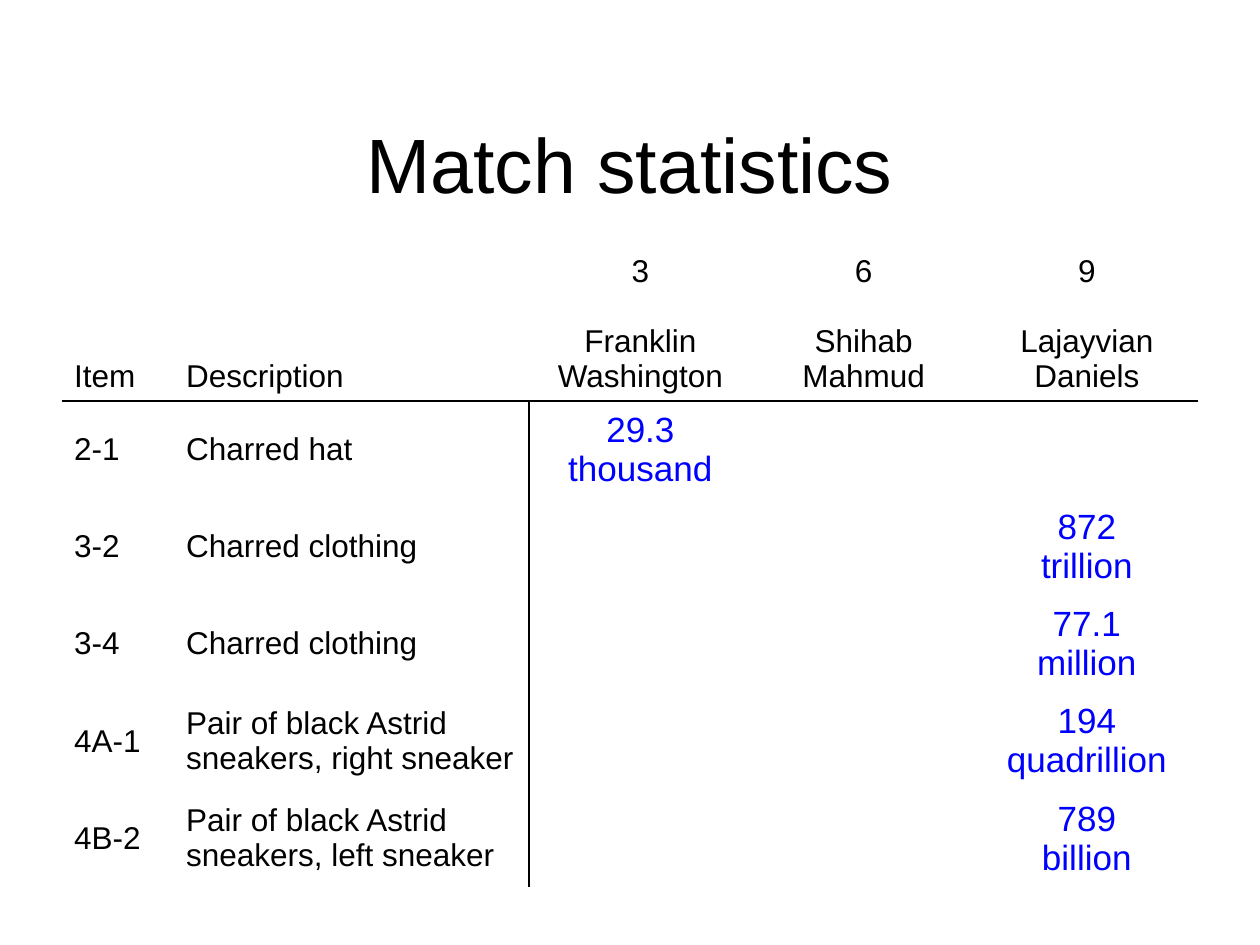
from dataclasses import dataclass

from lxml.etree import SubElement
from pptx import Presentation
from pptx.dml.color import RGBColor
from pptx.enum.text import MSO_ANCHOR, PP_ALIGN
from pptx.oxml.ns import qn
from pptx.slide import Slide
from pptx.table import Table, _Cell
from pptx.text.text import _Paragraph
from pptx.util import Cm, Pt

BLACK = RGBColor(0x00, 0x00, 0x00)
BLUE = RGBColor(0x00, 0x00, 0xFF)
FONT = "Arial"
COLUMN_WIDTHS = (2.26, 7.16, 4.5, 4.5, 4.5)
HEADER_HEIGHT = 3.3
ROW_HEIGHT = 1.96
BORDER_WIDTH = Pt(1.5)


@dataclass(frozen=True)
class Person:
    number: str
    name: str


@dataclass(frozen=True)
class Evidence:
    item: str
    description: str
    person: int
    statistic: str


PEOPLE = (
    Person("3", "Franklin Washington"),
    Person("6", "Shihab Mahmud"),
    Person("9", "Lajayvian Daniels"),
)
EVIDENCE = (
    Evidence("2-1", "Charred hat", 0, "29.3 thousand"),
    Evidence("3-2", "Charred clothing", 2, "872\vtrillion"),
    Evidence("3-4", "Charred clothing", 2, "77.1\vmillion"),
    Evidence("4A-1", "Pair of black Astrid sneakers, right sneaker", 2, "194 quadrillion"),
    Evidence("4B-2", "Pair of black Astrid sneakers, left sneaker", 2, "789\vbillion"),
)


def write(
    paragraph: _Paragraph,
    text: str,
    size: int = 18,
    color: RGBColor = BLACK,
    alignment: PP_ALIGN = PP_ALIGN.LEFT,
) -> None:
    """Fill a paragraph with text in one style."""
    paragraph.text = text
    paragraph.alignment = alignment
    paragraph.font.name = FONT
    paragraph.font.size = Pt(size)
    paragraph.font.color.rgb = color


def set_borders(cell: _Cell, visible: str) -> None:
    """Draw the named sides of a cell in black and clear the others."""
    properties = cell._tc.get_or_add_tcPr()
    for side in "LRTB":
        line = SubElement(properties, qn(f"a:ln{side}"), w=str(BORDER_WIDTH))
        if side in visible:
            fill = SubElement(line, qn("a:solidFill"))
            SubElement(fill, qn("a:srgbClr"), val=str(BLACK))
        else:
            SubElement(line, qn("a:noFill"))


def format_cells(table: Table) -> None:
    """Clear the fills and rule off the header and the description column."""
    for row_index, row in enumerate(table.rows):
        for column_index, cell in enumerate(row.cells):
            if row_index == 0:
                sides = "B"
            else:
                sides = "T" if row_index == 1 else ""
                sides += {1: "R", 2: "L"}.get(column_index, "")
            set_borders(cell, sides)
            cell.fill.background()
            cell.vertical_anchor = MSO_ANCHOR.MIDDLE if row_index else MSO_ANCHOR.BOTTOM


def add_title(slide: Slide, text: str) -> None:
    """Add the centred slide title."""
    box = slide.shapes.add_textbox(Cm(0.13), Cm(1.7), Cm(25.14), Cm(3.18))
    box.text_frame.word_wrap = True
    box.text_frame.vertical_anchor = MSO_ANCHOR.MIDDLE
    write(box.text_frame.paragraphs[0], text, 44, alignment=PP_ALIGN.CENTER)


def add_match_table(slide: Slide) -> None:
    """Add the table of evidence items against people."""
    heights = (HEADER_HEIGHT, *[ROW_HEIGHT] * len(EVIDENCE))
    table = slide.shapes.add_table(
        len(heights), len(COLUMN_WIDTHS), Cm(1.24), Cm(4.78),
        Cm(sum(COLUMN_WIDTHS)), Cm(sum(heights)),
    ).table
    table.first_row = table.horz_banding = False
    for column, width in zip(table.columns, COLUMN_WIDTHS):
        column.width = Cm(width)
    for row, height in zip(table.rows, heights):
        row.height = Cm(height)
    format_cells(table)

    for index, heading in enumerate(("Item", "Description")):
        write(table.cell(0, index).text_frame.paragraphs[0], heading)
    for index, person in enumerate(PEOPLE, start=2):
        frame = table.cell(0, index).text_frame
        write(frame.paragraphs[0], person.number, alignment=PP_ALIGN.CENTER)
        name = frame.add_paragraph()
        write(name, person.name, alignment=PP_ALIGN.CENTER)
        name.space_before = Pt(20)

    for index, evidence in enumerate(EVIDENCE, start=1):
        write(table.cell(index, 0).text_frame.paragraphs[0], evidence.item)
        write(table.cell(index, 1).text_frame.paragraphs[0], evidence.description)
        statistic = table.cell(index, evidence.person + 2).text_frame.paragraphs[0]
        write(statistic, evidence.statistic, 20, BLUE, PP_ALIGN.CENTER)


def main() -> None:
    """Build and save the match statistics slide."""
    presentation = Presentation()
    presentation.slide_width = Cm(25.4)
    presentation.slide_height = Cm(19.05)
    slide = presentation.slides.add_slide(presentation.slide_layouts[6])
    add_title(slide, "Match statistics")
    add_match_table(slide)
    presentation.save("out.pptx")


if __name__ == "__main__":
    main()
